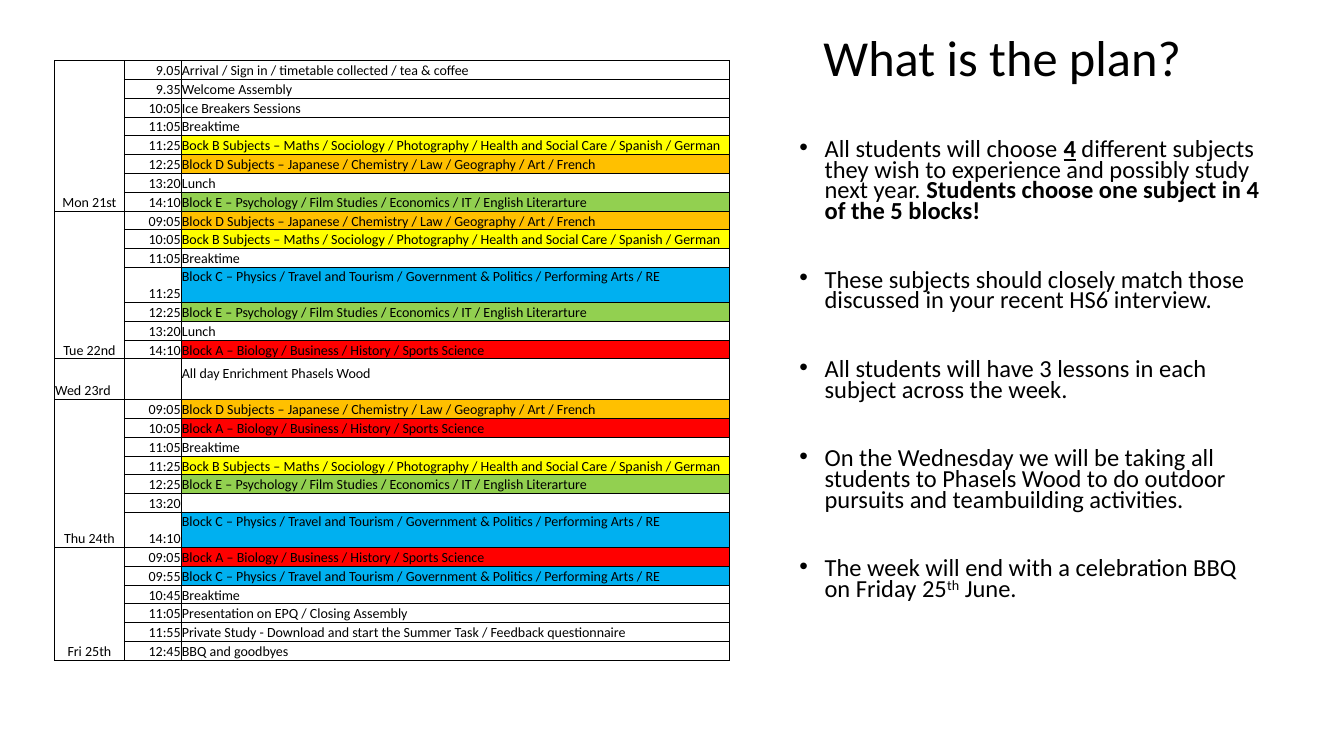
from lxml.etree import SubElement
from pptx import Presentation
from pptx.dml.color import RGBColor
from pptx.enum.text import MSO_ANCHOR as Anchor, MSO_AUTO_SIZE as AutoSize, PP_ALIGN as Align
from pptx.oxml.ns import qn
from pptx.util import Pt

BLACK = RGBColor(0, 0, 0)
YELLOW = RGBColor(0xFF, 0xFF, 0)
ORANGE = RGBColor(0xFF, 0xC0, 0)
GREEN = RGBColor(0x92, 0xD0, 0x50)
BLUE = RGBColor(0, 0xB0, 0xF0)
RED = RGBColor(0xFF, 0, 0)
FONT = "Calibri"

A = ("Block A – Biology / Business / History / Sports Science", RED)
B = ("Bock B Subjects – Maths / Sociology / Photography / Health and Social Care / Spanish / German", YELLOW)
C = ("Block C – Physics / Travel and Tourism / Government & Politics / Performing Arts / RE", BLUE)
D = ("Block D Subjects – Japanese / Chemistry / Law / Geography / Art / French", ORANGE)
E = ("Block E – Psychology / Film Studies / Economics / IT / English Literarture", GREEN)
BREAK = ("Breaktime", None)
LUNCH = ("Lunch", None)

DAYS = [
    ("Mon 21st", [
        ("9.05", ("Arrival / Sign in / timetable collected / tea & coffee", None)),
        ("9.35", ("Welcome Assembly", None)),
        ("10:05", ("Ice Breakers Sessions", None)),
        ("11:05", BREAK), ("11:25", B), ("12:25", D), ("13:20", LUNCH), ("14:10", E)]),
    ("Tue 22nd", [
        ("09:05", D), ("10:05", B), ("11:05", BREAK), ("11:25", C),
        ("12:25", E), ("13:20", LUNCH), ("14:10", A)]),
    ("Wed 23rd", [("", ("All day Enrichment Phasels Wood", None))]),
    ("Thu 24th", [
        ("09:05", D), ("10:05", A), ("11:05", BREAK), ("11:25", B),
        ("12:25", E), ("13:20", ("", None)), ("14:10", C)]),
    ("Fri 25th", [
        ("09:05", A), ("09:55", C), ("10:45", BREAK),
        ("11:05", ("Presentation on EPQ / Closing Assembly", None)),
        ("11:55", ("Private Study - Download and start the Summer Task / Feedback questionnaire", None)),
        ("12:45", ("BBQ and goodbyes", None))]),
]
COLS = (49.9, 40.7, 391.4)
ROW_H = 13.46
TALL_ROWS = {("Tue 22nd", "11:25"): 25, ("Wed 23rd", ""): 29.1, ("Thu 24th", "14:10"): 25}

POINTS = [
    [("All students will choose ", ""), ("4", "bu"),
     (" different subjects they wish to experience and possibly study next year. ", ""),
     ("Students choose one subject in 4 of the 5 blocks!", "b")],
    [("These subjects should closely match those discussed in your recent HS6 interview.", "")],
    [("All students will have 3 lessons in each subject across the week.", "")],
    [("On the Wednesday we will be taking all students to Phasels Wood to do outdoor "
      "pursuits and teambuilding activities.", "")],
    [("The week will end with a celebration BBQ on Friday 25", ""), ("th", "^"), (" June.", "")],
]


def place(sp, x, y, w, h):
    sp.left, sp.top, sp.width, sp.height = Pt(x), Pt(y), Pt(w), Pt(h)


def add_run(p, text, size):
    r = p.add_run()
    r.text = text
    r.font.size = Pt(size)
    r.font.name = FONT
    r.font.color.rgb = BLACK
    return r


def add_title(s, x, y, w, h):
    sp = s.shapes.title
    place(sp, x, y, w, h)
    tf = sp.text_frame
    tf.auto_size = AutoSize.NONE
    tf.vertical_anchor = Anchor.MIDDLE
    p = tf.paragraphs[0]
    p.alignment = Align.LEFT
    p.line_spacing = 0.9
    add_run(p, "What is the plan?", 36)


def add_points(s, x, y, w, h):
    sp = s.placeholders[1]
    place(sp, x, y, w, h)
    tf = sp.text_frame
    tf.auto_size = AutoSize.NONE
    for i, point in enumerate(POINTS):
        p = tf.add_paragraph() if i else tf.paragraphs[0]
        pPr = p._p.get_or_add_pPr()
        pPr.set("marL", str(Pt(18)))
        pPr.set("indent", str(-Pt(18)))
        SubElement(pPr, qn("a:buFont"), typeface="Arial")
        SubElement(pPr, qn("a:buChar"), char="•")
        p.line_spacing = 0.7
        p.space_before = Pt(34.5 if i else 0)
        for text, style in point:
            r = add_run(p, text, 17.5)
            r.font.bold = "b" in style
            r.font.underline = "u" in style
            if "^" in style:
                r.font._element.set("baseline", "30000")


def format_cell(cell, fill=None):
    tcPr = cell._tc.get_or_add_tcPr()
    for side in ("lnL", "lnR", "lnT", "lnB"):
        ln = SubElement(tcPr, qn(f"a:{side}"), w=str(Pt(0.5)))
        SubElement(SubElement(ln, qn("a:solidFill")), qn("a:srgbClr"), val=str(BLACK))
    if fill is None:
        cell.fill.background()
    else:
        cell.fill.solid()
        cell.fill.fore_color.rgb = fill
    cell.vertical_anchor = Anchor.BOTTOM
    cell.margin_left = cell.margin_right = cell.margin_top = Pt(0.5)
    cell.margin_bottom = Pt(0)


def write_cell(cell, text, align):
    p = cell.text_frame.paragraphs[0]
    p.alignment = align
    if text:
        add_run(p, text, 10)
    else:
        SubElement(p._p, qn("a:endParaRPr"), sz="1000")


def add_timetable(s, x, y, w, h):
    count = sum(len(sessions) for _, sessions in DAYS)
    table = s.shapes.add_table(count, len(COLS), Pt(x), Pt(y), Pt(w), Pt(h)).table
    table.first_row = table.horz_banding = False
    for column, width in zip(table.columns, COLS):
        column.width = Pt(width)
    row = 0
    for day, sessions in DAYS:
        first = table.cell(row, 0)
        if len(sessions) > 1:
            first.merge(table.cell(row + len(sessions) - 1, 0))
        write_cell(first, day, Align.CENTER if len(sessions) > 1 else Align.LEFT)
        for time, (activity, fill) in sessions:
            table.rows[row].height = Pt(TALL_ROWS.get((day, time), ROW_H))
            day_cell, time_cell, activity_cell = (table.cell(row, c) for c in range(3))
            format_cell(day_cell)
            format_cell(time_cell)
            format_cell(activity_cell, fill)
            write_cell(time_cell, time, Align.RIGHT)
            write_cell(activity_cell, activity, Align.LEFT)
            if (day, time) in TALL_ROWS:
                activity_cell.margin_bottom = Pt(12.2)
            row += 1


def main():
    prs = Presentation()
    prs.slide_width, prs.slide_height = Pt(960), Pt(540)
    s = prs.slides.add_slide(prs.slide_layouts[1])
    add_title(s, 581, 18.7, 312.5, 48.2)
    add_points(s, 563.8, 97.2, 347.8, 399.6)
    add_timetable(s, 38.9, 43.2, sum(COLS), 429.1)
    prs.save("out.pptx")


if __name__ == "__main__":
    main()
